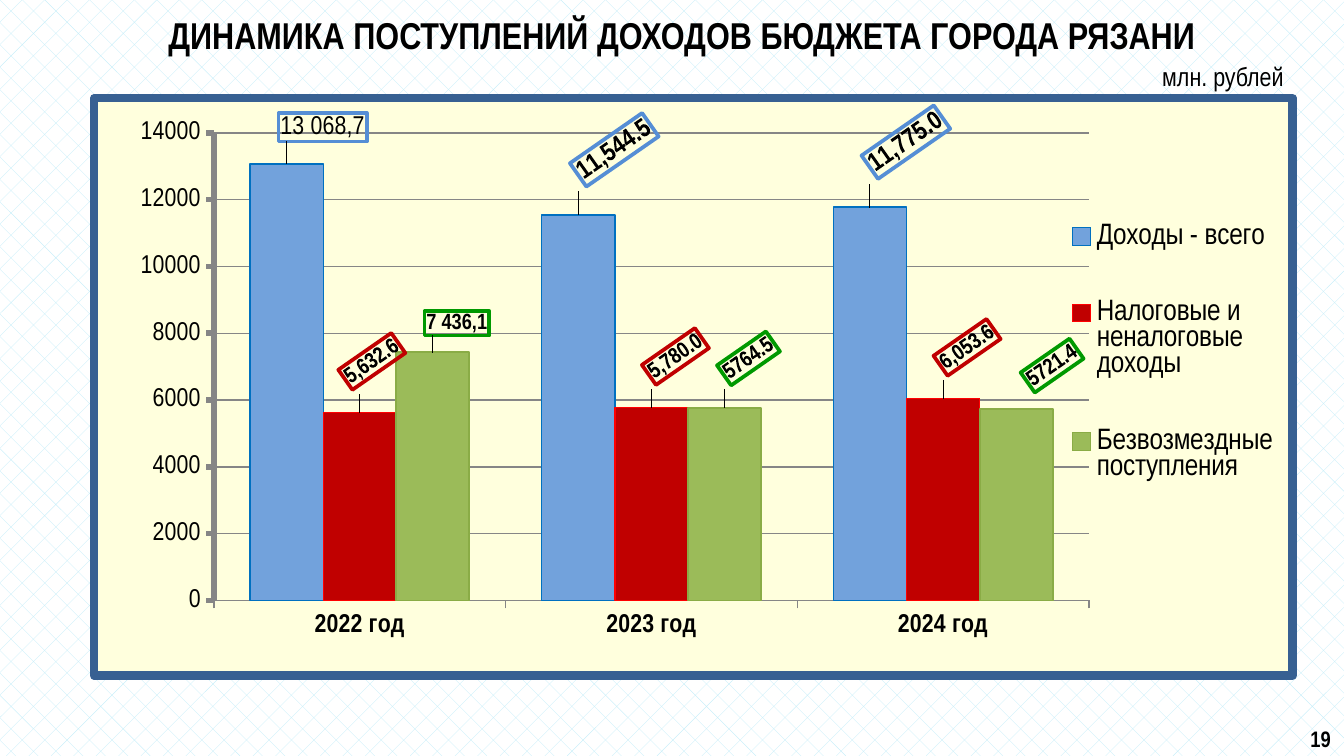
from lxml import etree
from pptx import Presentation
from pptx import util as u
from pptx.chart.data import CategoryChartData
from pptx.dml.color import RGBColor
from pptx.enum import chart as ch, dml, text as tx
from pptx.oxml import parse_xml
from pptx.oxml.ns import nsdecls, qn

HEADING = "ДИНАМИКА ПОСТУПЛЕНИЙ ДОХОДОВ БЮДЖЕТА ГОРОДА РЯЗАНИ"
UNITS = "млн. рублей"
PAGE = "19"
YEARS = ["2022 год", "2023 год", "2024 год"]
INCOME = [
    dict(name="Доходы - всего", values=[13068.7, 11544.5, 11775.0],
         fill="72A2DC", line="0070C0", width=0.75, frame="558ED5",
         size=14, format="#,##0.0", custom="13 068,7", custom_bold=False,
         shifts=[(0.03, -0.03), (0.03, -0.04), (0.03, -0.04)]),
    dict(name="Налоговые и неналоговые доходы", values=[5632.6, 5780.0, 6053.6],
         fill="C00000", line="FF0000", width=0.75, frame="C00000",
         size=12, format="#,##0.0", custom=None, custom_bold=True,
         shifts=[(0.01, -0.03), (0.02, -0.03), (0.02, -0.03)]),
    dict(name="Безвозмездные поступления", values=[7436.1, 5764.5, 5721.4],
         fill="9BBB59", line="8AAC46", width=1, frame="009900",
         size=12, format="General", custom="7 436,1", custom_bold=True,
         shifts=[(0.02, -0.02), (0.02, -0.03), (0.03, -0.02)]),
]
THEME = dict(font="Arial Narrow", ink="000000", grid="868686", panel="FFFFDD",
             border="376092", pattern="BDECF9", paper="FFFFFF",
             title=20, axis=14, legend=16, units=14, page=12)
PLOT = (0.1, 0.06, 0.73, 0.81)
LEGEND = (0.81, 0.13, 0.18, 0.62)
LABEL_ANGLE = -35


def rgb(value):
    return RGBColor.from_string(value)


def style_font(font, size, bold=False):
    font.name, font.size, font.bold = THEME["font"], u.Pt(size), bold
    font.color.rgb = rgb(THEME["ink"])


def write(frame, words, size, bold=False, align=None, anchor=None, wrap=True):
    frame.word_wrap = wrap
    if anchor is not None:
        frame.vertical_anchor = anchor
    paragraph = frame.paragraphs[0]
    paragraph.alignment = align
    run = paragraph.add_run()
    run.text = words
    style_font(run.font, size, bold)


def place(shape, left, top, width, height):
    shape.left, shape.top = u.Cm(left), u.Cm(top)
    shape.width, shape.height = u.Cm(width), u.Cm(height)


def manual_layout(parent, index, values, inner=False, edge=True):
    for old in parent.findall(qn("c:layout")):
        parent.remove(old)
    layout = etree.Element(qn("c:layout"))
    manual = etree.SubElement(layout, qn("c:manualLayout"))
    entries = [("layoutTarget", "inner")] if inner else []
    if edge:
        entries += [("xMode", "edge"), ("yMode", "edge")]
    entries += zip("xywh", values)
    for tag, value in entries:
        etree.SubElement(manual, qn("c:" + tag)).set("val", str(value))
    parent.insert(index, layout)


def outline(color, points, fill=None):
    paint = f'<a:solidFill><a:srgbClr val="{fill}"/></a:solidFill>' if fill else "<a:noFill/>"
    return parse_xml(
        f'<c:spPr {nsdecls("c", "a")}>{paint}<a:ln w="{u.Pt(points)}"><a:solidFill>'
        f'<a:srgbClr val="{color}"/></a:solidFill></a:ln></c:spPr>')


def label_point(series, number, income):
    label = series.points[number].data_label
    custom = income["custom"] if number == 0 else None
    if custom:
        write(label.text_frame, custom, income["size"], income["custom_bold"], wrap=False)
    else:
        style_font(label.font, income["size"], True)
    label.position = ch.XL_LABEL_POSITION.OUTSIDE_END
    node = series._element.find(qn("c:dLbls")).findall(qn("c:dLbl"))[number]
    manual_layout(node, 1, income["shifts"][number], edge=False)
    follower = node.find(qn("c:dLblPos"))
    if not custom:
        follower = node.find(qn("c:txPr"))
        body = follower.find(qn("a:bodyPr"))
        body.set("rot", str(LABEL_ANGLE * 60000))
        body.set("vert", "horz")
        number_format = etree.Element(qn("c:numFmt"))
        number_format.set("formatCode", income["format"])
        number_format.set("sourceLinked", "0")
        follower.addprevious(number_format)
    follower.addprevious(outline(income["frame"], 2))


def style_axis(axis, bold, width):
    style_font(axis.tick_labels.font, THEME["axis"], bold)
    axis.major_tick_mark = ch.XL_TICK_MARK.OUTSIDE
    axis.format.line.color.rgb = rgb(THEME["grid"])
    axis.format.line.width = u.Pt(width)


def add_income_chart(slide):
    data = CategoryChartData()
    data.categories = YEARS
    for income in INCOME:
        data.add_series(income["name"], income["values"])
    chart = slide.shapes.add_chart(
        ch.XL_CHART_TYPE.COLUMN_CLUSTERED, u.Cm(1.7), u.Cm(1.78),
        u.Cm(22.81), u.Cm(11.07), data).chart
    chart.has_title = False
    style_font(chart.font, 18)
    chart._chartSpace.find(qn("c:txPr")).addprevious(
        outline(THEME["border"], 4.5, THEME["panel"]))

    plot = chart.plots[0]
    plot.gap_width, plot.overlap, plot.vary_by_categories = 99, 0, False
    manual_layout(chart._chartSpace.chart.plotArea, 0, PLOT, inner=True)
    for series, income in zip(plot.series, INCOME):
        series.format.fill.solid()
        series.format.fill.fore_color.rgb = rgb(income["fill"])
        series.format.line.color.rgb = rgb(income["line"])
        series.format.line.width = u.Pt(income["width"])
        labels = series.data_labels
        labels.show_value = True
        labels.number_format = income["format"]
        labels.number_format_is_linked = False
        style_font(labels.font, income["size"], True)
        for number in range(len(YEARS)):
            label_point(series, number, income)

    style_axis(chart.category_axis, True, 0.75)
    amounts = chart.value_axis
    style_axis(amounts, False, 3)
    amounts.minimum_scale, amounts.maximum_scale, amounts.major_unit = 0, 14000, 2000
    amounts.tick_labels.number_format = "0"
    amounts.tick_labels.number_format_is_linked = False
    amounts.major_gridlines.format.line.color.rgb = rgb(THEME["grid"])
    amounts.major_gridlines.format.line.width = u.Pt(0.75)

    chart.has_legend = True
    legend = chart.legend
    legend.position = ch.XL_LEGEND_POSITION.RIGHT
    legend.include_in_layout = False
    style_font(legend.font, THEME["legend"])
    manual_layout(legend._element, 1, LEGEND)


def main():
    deck = Presentation()
    deck.slide_width, deck.slide_height = u.Cm(25.4), u.Cm(14.29)
    slide = deck.slides.add_slide(deck.slide_layouts[5])
    backdrop = slide.background.fill
    backdrop.patterned()
    backdrop.pattern = dml.MSO_PATTERN.DIAGONAL_BRICK
    backdrop.fore_color.rgb = rgb(THEME["pattern"])
    backdrop.back_color.rgb = rgb(THEME["paper"])

    heading = slide.shapes.title
    place(heading, 0.89, 0.15, 24, 1.02)
    write(heading.text_frame, HEADING, THEME["title"], True,
          tx.PP_ALIGN.CENTER, tx.MSO_ANCHOR.MIDDLE)
    add_income_chart(slide)
    for words, spot, size, bold, anchor in [
        (UNITS, (21.11, 1.14, 3.4, 0.61), THEME["units"], False, tx.MSO_ANCHOR.MIDDLE),
        (PAGE, (23.29, 13.59, 2.11, 0.66), THEME["page"], True, tx.MSO_ANCHOR.TOP),
    ]:
        note = slide.shapes.add_textbox(*map(u.Cm, spot))
        write(note.text_frame, words, size, bold, tx.PP_ALIGN.RIGHT, anchor)
    deck.save("out.pptx")


if __name__ == "__main__":
    main()
